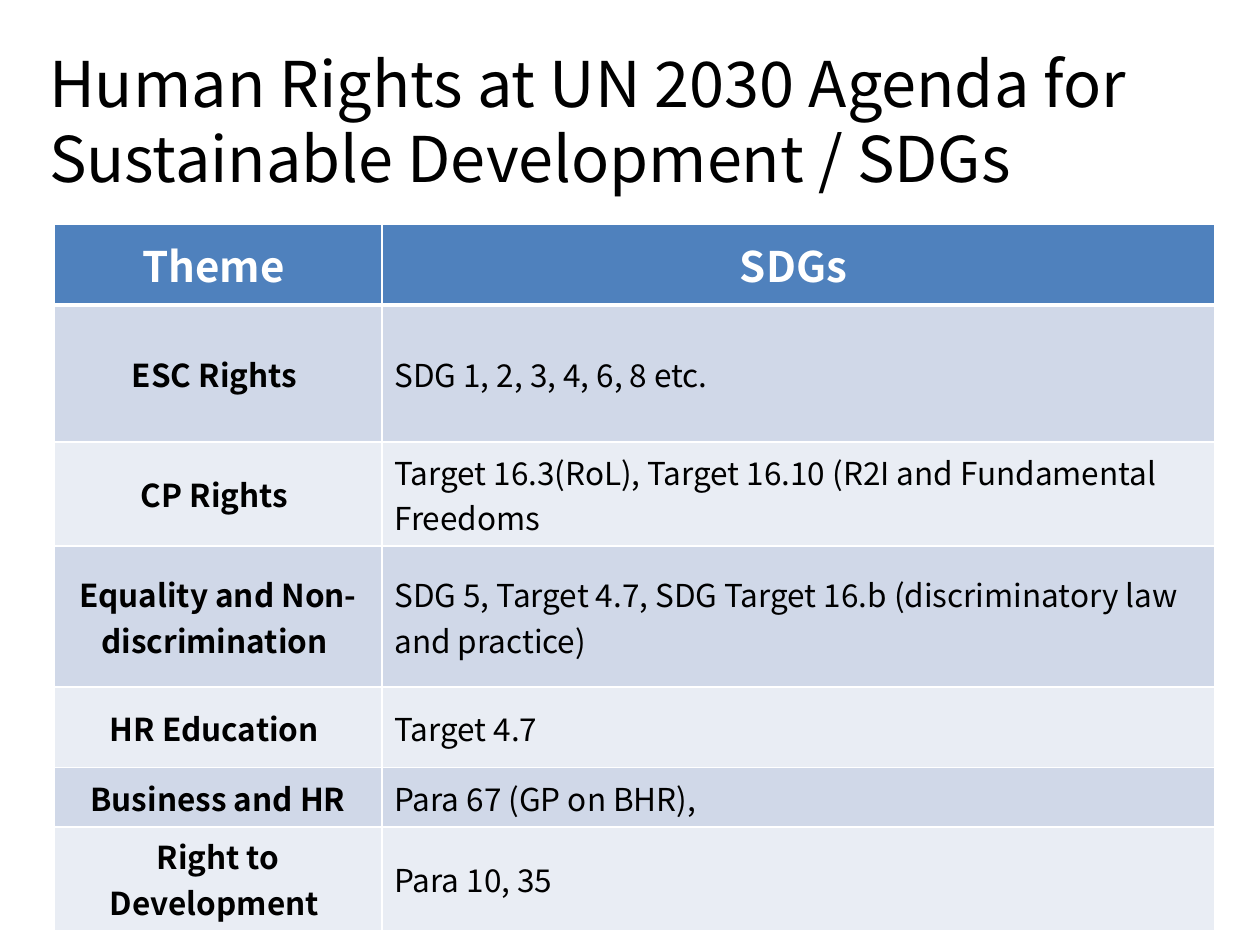
from dataclasses import dataclass

from lxml import etree
from pptx import Presentation
from pptx.dml.color import RGBColor
from pptx.enum.text import MSO_ANCHOR, MSO_AUTO_SIZE, PP_ALIGN
from pptx.oxml.ns import qn
from pptx.util import Inches, Pt

MIDDLE = MSO_ANCHOR.MIDDLE
GROW = MSO_AUTO_SIZE.SHAPE_TO_FIT_TEXT
LEFT, CENTER = PP_ALIGN.LEFT, PP_ALIGN.CENTER

FONT = "Noto Sans CJK KR"
BLACK = RGBColor(0x00, 0x00, 0x00)
WHITE = RGBColor(0xFF, 0xFF, 0xFF)
HEADER_BLUE = RGBColor(0x4F, 0x81, 0xBD)
BANDS = (RGBColor(0xD0, 0xD8, 0xE8), RGBColor(0xE9, 0xED, 0xF4))

SLIDE_W, SLIDE_H = 10, 7.5
TABLE_LEFT, TABLE_TOP = 0.43, 1.78
COLUMNS = (2.6, 6.61)


@dataclass(frozen=True)
class ThemeRow:
    theme: str
    sdgs: str
    height: float


@dataclass(frozen=True)
class CellStyle:
    fill: RGBColor
    color: RGBColor
    size: int
    bold: bool
    align: PP_ALIGN
    rule_below: int = 1


HEADER = ThemeRow("Theme ", "SDGs ", 0.64)
ROWS = (
    ThemeRow("ESC Rights ", "SDG 1, 2, 3, 4, 6, 8 etc.", 1.09),
    ThemeRow("CP Rights ", "Target 16.3(RoL), Target 16.10 (R2I and Fundamental Freedoms", 0.79),
    ThemeRow("Equality and Non-discrimination ",
             "SDG 5, Target 4.7, SDG Target 16.b (discriminatory law and practice)", 1.12),
    ThemeRow("HR Education ", "Target 4.7", 0.64),
    ThemeRow("Business and HR", "Para 67 (GP on BHR),", 0.47),
    ThemeRow("Right to Development ", "Para 10, 35", 0.47),
)


def add_run(p, text: str, size: int, color: RGBColor, bold: bool = False) -> None:
    r = p.add_run()
    r.text = text
    r.font.name = FONT
    r.font.size = Pt(size)
    r.font.bold = bold
    r.font.color.rgb = color


def set_borders(cell, below: int, above: int) -> None:
    tc_pr = cell._tc.get_or_add_tcPr()
    widths = {"lnL": 1, "lnR": 1, "lnT": above, "lnB": below}
    for i, (side, width) in enumerate(widths.items()):
        ln = etree.Element(qn(f"a:{side}"), w=str(Pt(width)))
        fill = etree.SubElement(ln, qn("a:solidFill"))
        etree.SubElement(fill, qn("a:srgbClr"), val=str(WHITE))
        tc_pr.insert(i, ln)


def fill_cell(cell, text: str, style: CellStyle, above: int) -> None:
    cell.vertical_anchor = MIDDLE
    cell.fill.solid()
    cell.fill.fore_color.rgb = style.fill
    p = cell.text_frame.paragraphs[0]
    p.alignment = style.align
    add_run(p, text, style.size, style.color, style.bold)
    set_borders(cell, style.rule_below, above)


def add_theme_table(slide) -> None:
    rows = (HEADER, *ROWS)
    table = slide.shapes.add_table(
        len(rows), len(COLUMNS), Inches(TABLE_LEFT), Inches(TABLE_TOP),
        Inches(sum(COLUMNS)), Inches(sum(row.height for row in rows))).table
    for column, width in zip(table.columns, COLUMNS):
        column.width = Inches(width)
    header_style = CellStyle(HEADER_BLUE, WHITE, 24, True, CENTER, 3)
    for i, row in enumerate(rows):
        table.rows[i].height = Inches(row.height)
        band = BANDS[(i - 1) % len(BANDS)]
        styles = (
            (header_style, header_style) if i == 0 else
            (CellStyle(band, BLACK, 18, True, CENTER), CellStyle(band, BLACK, 18, False, LEFT))
        )
        above = header_style.rule_below if i == 1 else 1
        for j, (text, style) in enumerate(zip((row.theme, row.sdgs), styles)):
            fill_cell(table.cell(i, j), text, style, above)


def add_title(slide, text: str) -> None:
    sp = slide.shapes.add_textbox(Inches(0.28), Inches(0.29), Inches(9.61), Inches(1.33))
    tf = sp.text_frame
    tf.word_wrap = True
    tf.auto_size = GROW
    tf.margin_left = tf.margin_right = Inches(0.11)
    tf.margin_top = tf.margin_bottom = Inches(0.06)
    add_run(tf.paragraphs[0], text, 36, BLACK)


def main() -> None:
    prs = Presentation()
    prs.slide_width, prs.slide_height = Inches(SLIDE_W), Inches(SLIDE_H)
    s = prs.slides.add_slide(prs.slide_layouts[6])
    add_theme_table(s)
    add_title(s, "Human Rights at UN 2030 Agenda for Sustainable Development / SDGs")
    prs.save("out.pptx")


if __name__ == "__main__":
    main()
